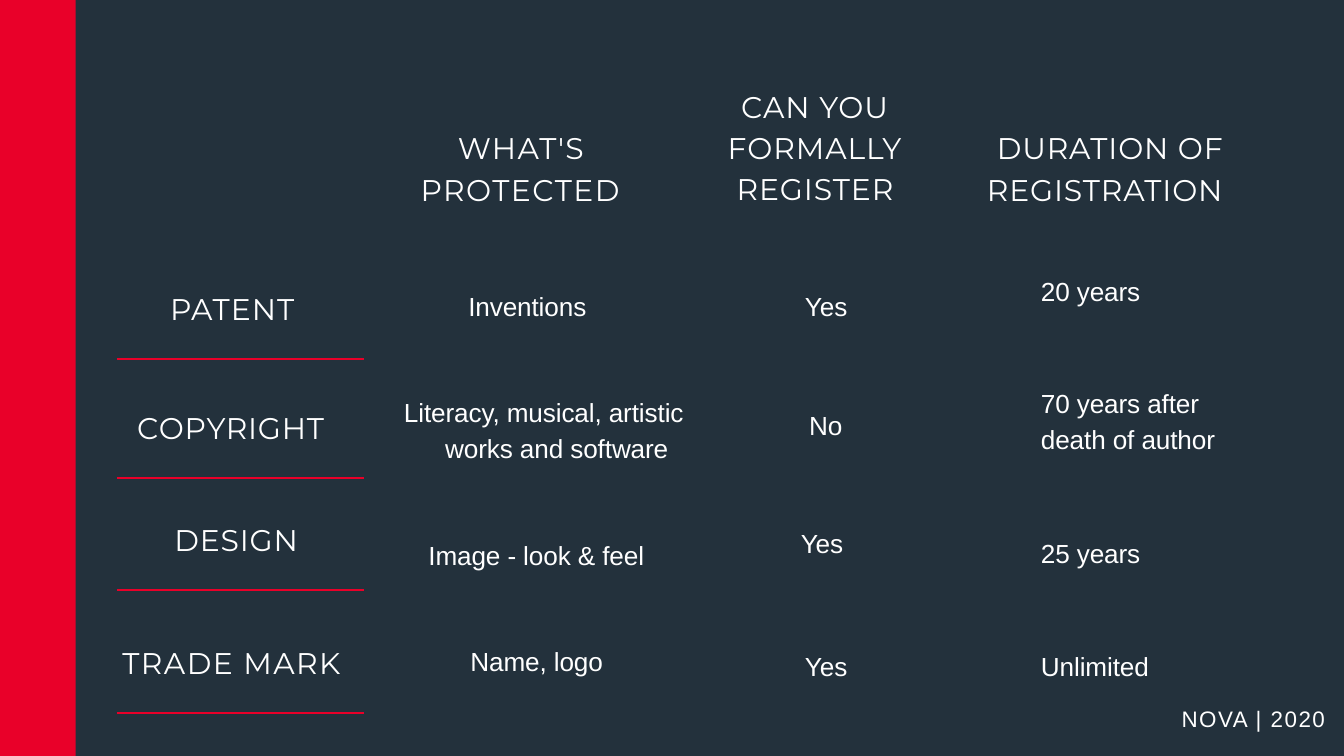
from pptx import Presentation
from pptx.dml.color import RGBColor
from pptx.enum.shapes import MSO_CONNECTOR as CONN, MSO_SHAPE as SHAPE
from pptx.enum.text import MSO_ANCHOR as ANCHOR, MSO_AUTO_SIZE as AUTO, PP_ALIGN as ALIGN
from pptx.oxml.ns import qn
from pptx.util import Emu, Pt
from lxml.etree import SubElement

DARK, RED, WHITE = "23313C", "E90029", "FFFFFF"
RULE_X, RULE_W, LABEL_RISE = 167, 353, 99
ANSWER_W, DURATION_X, DURATION_W = 70, 1486, 260

ROWS = [
    {"rule": 513, "label": ("PATENT", 242, 204, 1.1), "what": ("Inventions", 668, 414, 180),
     "answer": ("Yes", 1149, 414), "duration": ("20 years", 392)},
    {"rule": 683, "label": ("COPYRIGHT", 195, 298, 0.8),
     "what": ("Literacy, musical, artistic\vworks and software", 576, 558, 420),
     "answer": ("No", 1155, 584), "duration": ("70 years after\vdeath of author", 546)},
    {"rule": 843, "label": ("DESIGN", 248, 192, 0.9), "what": ("Image - look & feel", 611, 769, 320),
     "answer": ("Yes", 1143, 753), "duration": ("25 years", 767)},
    {"rule": 1019, "label": ("TRADE MARK", 174, 341, 1.5), "what": ("Name, logo", 671, 921, 200),
     "answer": ("Yes", 1149, 928), "duration": ("Unlimited", 928)},
]


def px(n):
    """Turn pixels at 96 to the inch into EMU."""
    return Emu(n * 9525)


def rgb(value):
    """Turn a hex string into a colour."""
    return RGBColor.from_string(value)


def write(sp, text, size, font, spc, leading=1.0, margin=1, indent=0, align=ALIGN.LEFT):
    """Fill a shape with one paragraph of tracked white text."""
    tf = sp.text_frame
    tf.word_wrap, tf.auto_size, tf.vertical_anchor = True, AUTO.NONE, ANCHOR.TOP
    tf.margin_left = tf.margin_right = tf.margin_bottom = 0
    tf.margin_top = px(1)
    p = tf.paragraphs[0]
    p.text = text
    p.alignment, p.line_spacing, p.space_before = align, leading, Pt(1)
    p.font.size, p.font.name, p.font.bold = Pt(size), font, False
    p.font.color.rgb = rgb(WHITE)
    pPr = p._p.get_or_add_pPr()
    pPr.set("marL", str(px(margin)))
    pPr.set("indent", str(px(indent)))
    for r in p.runs:
        r._r.get_or_add_rPr().set("spc", str(round(spc * 100)))


def add_heading(s, text, x, y, w, h, spc, **layout):
    """Add a heading in capitals."""
    sp = s.shapes.add_textbox(px(x), px(y), px(w), px(h))
    write(sp, text, 32, "Montserrat", spc, **layout)


def add_entry(s, text, x, y, w, **layout):
    """Add a table entry of one or two lines."""
    h = 107 if "\v" in text else 47
    sp = s.shapes.add_textbox(px(x), px(y), px(w), px(h))
    write(sp, text, 28, "Arial", -0.1, leading=1.15 if "\v" in text else 1.0, **layout)


def add_rule(s, y):
    """Add the red line under a row label."""
    line = s.shapes.add_connector(CONN.STRAIGHT, px(RULE_X), px(y), px(RULE_X + RULE_W), px(y))
    line.line.color.rgb, line.line.width = rgb(RED), Pt(2)
    SubElement(line._element.spPr, qn("a:effectLst"))


def add_bar(s, h):
    """Add the red bar along the left edge."""
    bar = s.shapes.add_shape(SHAPE.RECTANGLE, 0, 0, px(108), h)
    bar.shadow.inherit = False
    bar.fill.solid()
    bar.fill.fore_color.rgb = rgb(RED)
    bar.line.fill.background()


def add_title(s):
    """Place the middle column heading in the title placeholder."""
    title = s.shapes.title
    title.left, title.top, title.width, title.height = px(1025), px(118), px(278), px(180)
    write(title, "CAN YOU\vFORMALLY\vREGISTER", 32, "Montserrat", 1, leading=1.15, align=ALIGN.CENTER)


def add_row(s, row):
    """Add one kind of right with its label, rule and entries."""
    text, x, w, spc = row["label"]
    add_heading(s, text, x, row["rule"] - LABEL_RISE, w, 54, spc)
    add_rule(s, row["rule"])
    text, x, y, w = row["what"]
    hanging = {"margin": 60, "indent": -59} if "\v" in text else {}
    add_entry(s, text, x, y, w, **hanging)
    add_entry(s, *row["answer"], ANSWER_W)
    text, y = row["duration"]
    add_entry(s, text, DURATION_X, y, DURATION_W)


def main():
    """Build the slide and save it."""
    prs = Presentation()
    prs.slide_width, prs.slide_height = px(1920), px(1080)
    s = prs.slides.add_slide(prs.slide_layouts[5])
    s.background.fill.solid()
    s.background.fill.fore_color.rgb = rgb(DARK)
    add_bar(s, prs.slide_height)
    add_title(s)
    add_heading(s, "WHAT'S\vPROTECTED", 600, 177, 307, 121, 1.5, leading=1.15, indent=53)
    add_heading(s, "DURATION OF\vREGISTRATION", 1409, 177, 377, 121, 0.9, leading=1.15, indent=14)
    for row in ROWS:
        add_row(s, row)
    footer = s.shapes.add_textbox(px(1687), px(1013), px(225), px(35))
    write(footer, "NOVA | 2020", 24, "Arial", 1.6, leading=Pt(24))
    prs.save("out.pptx")


if __name__ == "__main__":
    main()
